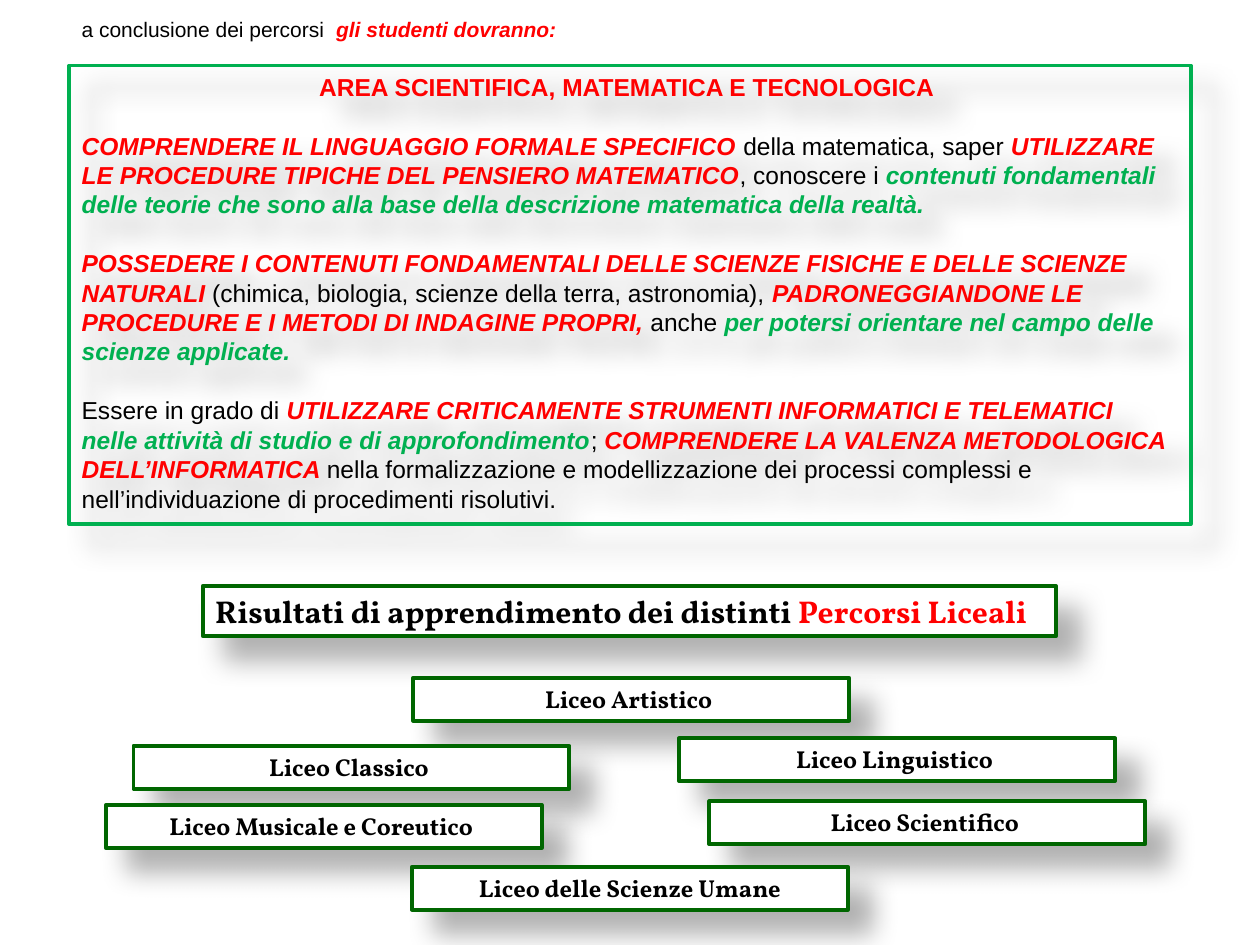
import pptx
import pptx.dml.color
import pptx.enum.shapes
import pptx.enum.text
import pptx.oxml.ns
import pptx.util
from dataclasses import dataclass
from lxml import etree

Inches = pptx.util.Inches
Pt = pptx.util.Pt
ALIGN = pptx.enum.text.PP_ALIGN


@dataclass(frozen=True)
class Theme:
    black: str = "000000"
    white: str = "FFFFFF"
    red: str = "FF0000"
    green: str = "00B050"
    dark: str = "006600"
    sans: str = "Arial"
    serif: str = "Vollkorn"
    small: float = 12
    body: float = 14
    large: float = 18
    gap: float = 16.8
    edge: float = 2.25


def color(code):
    return pptx.dml.color.RGBColor.from_string(code)


def write(para, text, *, font, size, ink, bold=False, slant=False):
    run = para.add_run()
    run.text = text
    run.font.name = font
    run.font.size = Pt(size)
    run.font.bold = bold
    run.font.italic = slant
    run.font.color.rgb = color(ink)


class Page:
    def __init__(self, slide, theme):
        self.slide = slide
        self.theme = theme

    def fill_text(self, shape, paras, align=ALIGN.LEFT):
        """Each paragraph is a list of (text, format) pairs."""
        frame = shape.text_frame
        frame.word_wrap = True
        frame.auto_size = pptx.enum.text.MSO_AUTO_SIZE.SHAPE_TO_FIT_TEXT
        frame.vertical_anchor = pptx.enum.text.MSO_ANCHOR.TOP
        for i, runs in enumerate(paras):
            para = frame.paragraphs[0] if i == 0 else frame.add_paragraph()
            para.alignment = align
            for text, form in runs:
                write(para, text, **form)
        return frame.paragraphs

    def label(self, spot, paras):
        box = self.slide.shapes.add_textbox(*map(Inches, spot))
        self.fill_text(box, paras)

    def frame(self, spot, paras, line, fill=None, align=ALIGN.LEFT):
        kind = pptx.enum.shapes.MSO_SHAPE.RECTANGLE
        box = self.slide.shapes.add_shape(kind, *map(Inches, spot))
        if fill:
            box.fill.solid()
            box.fill.fore_color.rgb = color(fill)
        else:
            box.fill.background()
        box.line.color.rgb = color(line)
        box.line.width = Pt(self.theme.edge)
        self.shade(box)
        return self.fill_text(box, paras, align)

    def shade(self, box):
        box.shadow.inherit = False
        qn = pptx.oxml.ns.qn
        list_ = box._element.spPr.find(qn("a:effectLst"))
        drop = etree.SubElement(
            list_, qn("a:outerShdw"), blurRad=str(Pt(15)), dist=str(Pt(18)),
            dir=str(45 * 60000), algn="tl", rotWithShape="0")
        tint = etree.SubElement(drop, qn("a:srgbClr"), val=self.theme.black)
        etree.SubElement(tint, qn("a:alpha"), val="30000")


def main():
    deck = pptx.Presentation()
    deck.slide_width, deck.slide_height = Inches(10), Inches(7.5)
    theme = Theme()
    page = Page(deck.slides.add_slide(deck.slide_layouts[6]), theme)

    # Text formats
    plain = dict(font=theme.sans, size=theme.body, ink=theme.black)
    head = dict(plain, ink=theme.red, bold=True)
    key = dict(head, slant=True)
    goal = dict(key, ink=theme.green)
    title = dict(font=theme.serif, size=theme.large, ink=theme.black, bold=True)
    name = dict(title, size=theme.body)

    # Opening line
    page.label((0.55, 0.08, 4.06, 0.3), [[
        ("a conclusione dei percorsi  ", dict(plain, size=theme.small)),
        ("gli studenti dovranno:", dict(key, size=theme.small))]])

    # Subject area and its aims
    aims = [
        [("AREA SCIENTIFICA, MATEMATICA E TECNOLOGICA ", head)],
        [("COMPRENDERE IL LINGUAGGIO FORMALE SPECIFICO ", key),
         ("della matematica, saper ", plain),
         ("UTILIZZARE LE PROCEDURE TIPICHE DEL PENSIERO MATEMATICO", key),
         (", conoscere i ", plain),
         ("contenuti fondamentali delle teorie che sono alla base della "
          "descrizione matematica della realtà.", goal)],
        [("POSSEDERE I CONTENUTI FONDAMENTALI DELLE SCIENZE FISICHE E DELLE "
          "SCIENZE NATURALI ", key),
         ("(chimica, biologia, scienze della terra, astronomia), ", plain),
         ("PADRONEGGIANDONE LE PROCEDURE E I METODI DI INDAGINE PROPRI,", key),
         (" anche ", plain),
         ("per potersi orientare nel campo delle scienze applicate.", goal)],
        [("Essere in grado di ", plain),
         ("UTILIZZARE CRITICAMENTE STRUMENTI INFORMATICI E TELEMATICI", key)],
        [("nelle attività di studio e di approfondimento", goal),
         ("; ", plain),
         ("COMPRENDERE LA VALENZA METODOLOGICA DELL’INFORMATICA ", key),
         ("nella formalizzazione e modellizzazione dei processi complessi e "
          "nell’individuazione di procedimenti risolutivi.", plain)],
    ]
    paras = page.frame((0.55, 0.52, 8.9, 3.64), aims, theme.green)
    paras[0].alignment = ALIGN.CENTER
    for para in paras[1:4]:
        para.space_before = Pt(theme.gap)

    # Heading of the school types
    page.frame((1.61, 4.65, 6.77, 0.4), [[
        ("Risultati di apprendimento dei distinti ", title),
        ("Percorsi Liceali", dict(title, ink=theme.red))]],
        theme.dark, theme.white)

    # School types
    schools = [
        ("Liceo Artistico ", 3.28, 5.38),
        ("Liceo Linguistico ", 5.39, 5.86),
        ("Liceo Classico ", 1.06, 5.92),
        ("Liceo Scientifico ", 5.63, 6.36),
        ("Liceo Musicale e Coreutico ", 0.84, 6.39),
        ("Liceo delle Scienze Umane", 3.27, 6.88),
    ]
    for text, left, top in schools:
        page.frame((left, top, 3.46, 0.34), [[(text, name)]],
                   theme.dark, theme.white, ALIGN.CENTER)

    deck.save("out.pptx")


if __name__ == "__main__":
    main()
